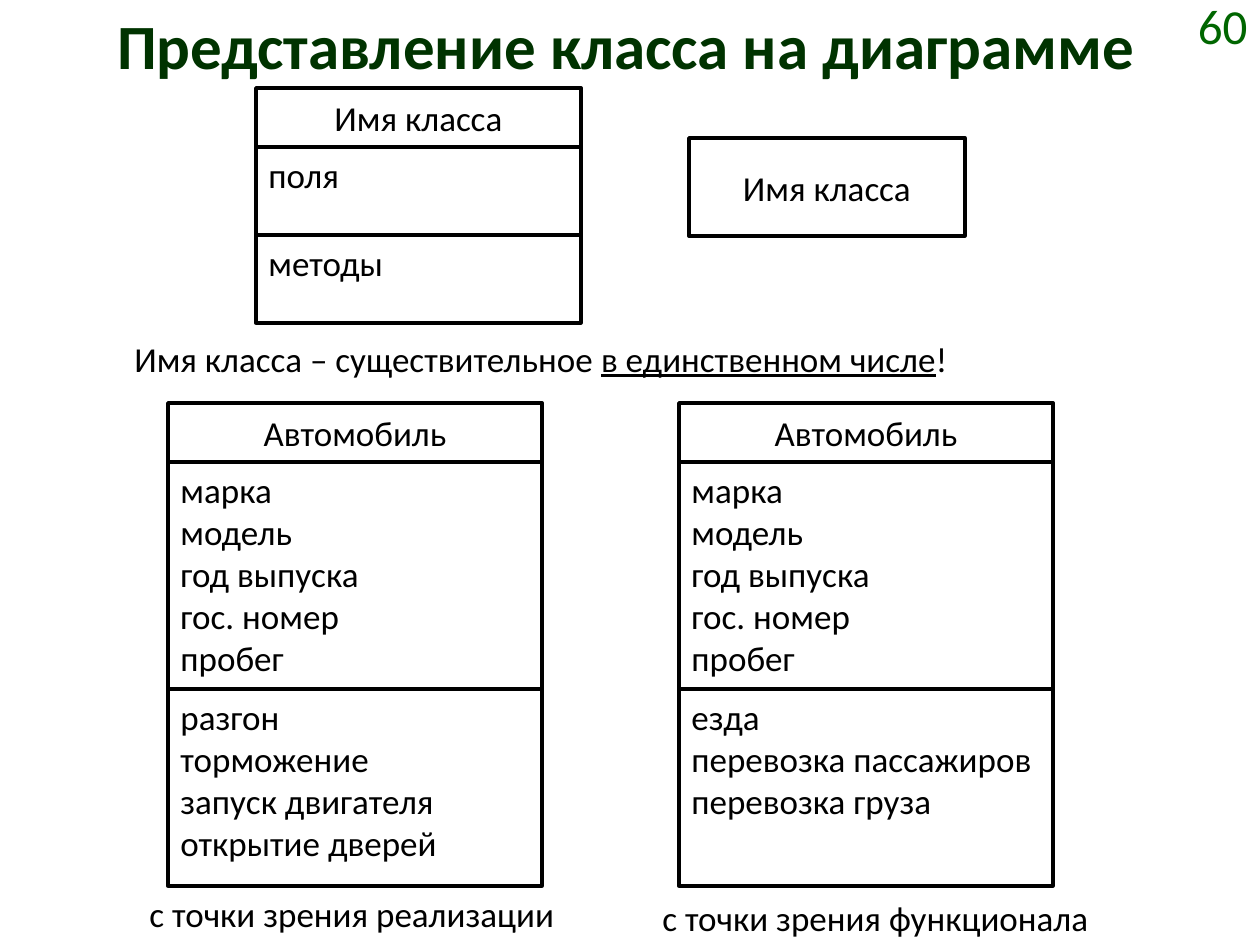
from pptx import Presentation
from pptx.dml.color import RGBColor
from pptx.enum.shapes import MSO_SHAPE as Shape
from pptx.enum.text import MSO_ANCHOR as Anchor, MSO_AUTO_SIZE as AutoSize, PP_ALIGN as Align
from pptx.util import Pt

PX = 914400 / 126
FONT = "Calibri"
BLACK, WHITE = "000000", "FFFFFF"
TITLE_GREEN, NUMBER_GREEN = "003300", "006600"
HEADER_HEIGHT = 59


def px(*lengths):
    return [round(length * PX) for length in lengths]


def color(value):
    return RGBColor.from_string(value)


def add_span(para, text, size=20, ink=BLACK, bold=False, underline=False):
    span = para.add_run()
    span.text = text
    font = span.font
    font.name, font.size, font.bold = FONT, Pt(size), bold
    font.underline = underline
    font.color.rgb = color(ink)


def add_title(page, text):
    title = page.shapes.title
    title.left, title.top, title.width, title.height = px(59, 0, 1134, 118)
    frame = title.text_frame
    frame.vertical_anchor = Anchor.TOP
    frame.auto_size = AutoSize.NONE
    para = frame.paragraphs[0]
    para.alignment = Align.CENTER
    add_span(para, text, 36, TITLE_GREEN, bold=True)


def add_number(page, text):
    box = page.shapes.add_textbox(*px(1131, 0, 129, 49))
    frame = box.text_frame
    frame.word_wrap = True
    frame.vertical_anchor = Anchor.MIDDLE
    para = frame.paragraphs[0]
    para.alignment = Align.RIGHT
    add_span(para, text, 28, NUMBER_GREEN)


def add_note(page, left, top, width, *spans):
    """Single-line note; each span is (text, underlined)."""
    box = page.shapes.add_textbox(*px(left, top, width, 55))
    frame = box.text_frame
    frame.word_wrap = False
    frame.auto_size = AutoSize.SHAPE_TO_FIT_TEXT
    para = frame.paragraphs[0]
    para.alignment = Align.JUSTIFY
    for text, underlined in spans:
        add_span(para, text, underline=underlined)


def add_section(page, left, top, width, height, lines, header=False):
    box = page.shapes.add_shape(Shape.RECTANGLE, *px(left, top, width, height))
    box.shadow.inherit = False
    box.fill.solid()
    box.fill.fore_color.rgb = color(WHITE)
    box.line.color.rgb = color(BLACK)
    box.line.width = Pt(2)
    frame = box.text_frame
    frame.word_wrap = True
    frame.vertical_anchor = Anchor.MIDDLE if header else Anchor.TOP
    for index, line in enumerate(lines):
        para = frame.add_paragraph() if index else frame.paragraphs[0]
        para.alignment = Align.CENTER if header else Align.LEFT
        add_span(para, line)


def add_class(page, left, top, width, name, *sections):
    """Class box: a header, then stacked (height, lines) sections."""
    add_section(page, left, top, width, HEADER_HEIGHT, [name], header=True)
    top += HEADER_HEIGHT
    for height, lines in sections:
        add_section(page, left, top, width, height, lines)
        top += height


def main():
    deck = Presentation()
    deck.slide_width, deck.slide_height = px(1260, 945)
    page = deck.slides.add_slide(deck.slide_layouts[5])

    # Heading
    add_title(page, "Представление класса на диаграмме")
    add_number(page, "60")

    # Full and short notation
    add_class(page, 256, 88, 325, "Имя класса", (88, ["поля"]), (88, ["методы"]))
    add_section(page, 689, 138, 276, 98, ["Имя класса"], header=True)
    add_note(page, 122, 331, 845, ("Имя класса – существительное ", False),
             ("в единственном числе", True), ("!", False))

    # The same class from two points of view
    fields = ["марка", "модель", "год выпуска", "гос. номер", "пробег"]
    actions = ["разгон", "торможение", "запуск двигателя", "открытие дверей"]
    functions = ["езда", "перевозка пассажиров", "перевозка груза"]
    for left, methods in ((168, actions), (679, functions)):
        add_class(page, left, 403, 374, "Автомобиль", (227, fields), (197, methods))
    add_note(page, 137, 886, 433, ("с точки зрения реализации", False))
    add_note(page, 650, 890, 455, ("с точки зрения функционала", False))

    deck.save("out.pptx")


if __name__ == "__main__":
    main()
